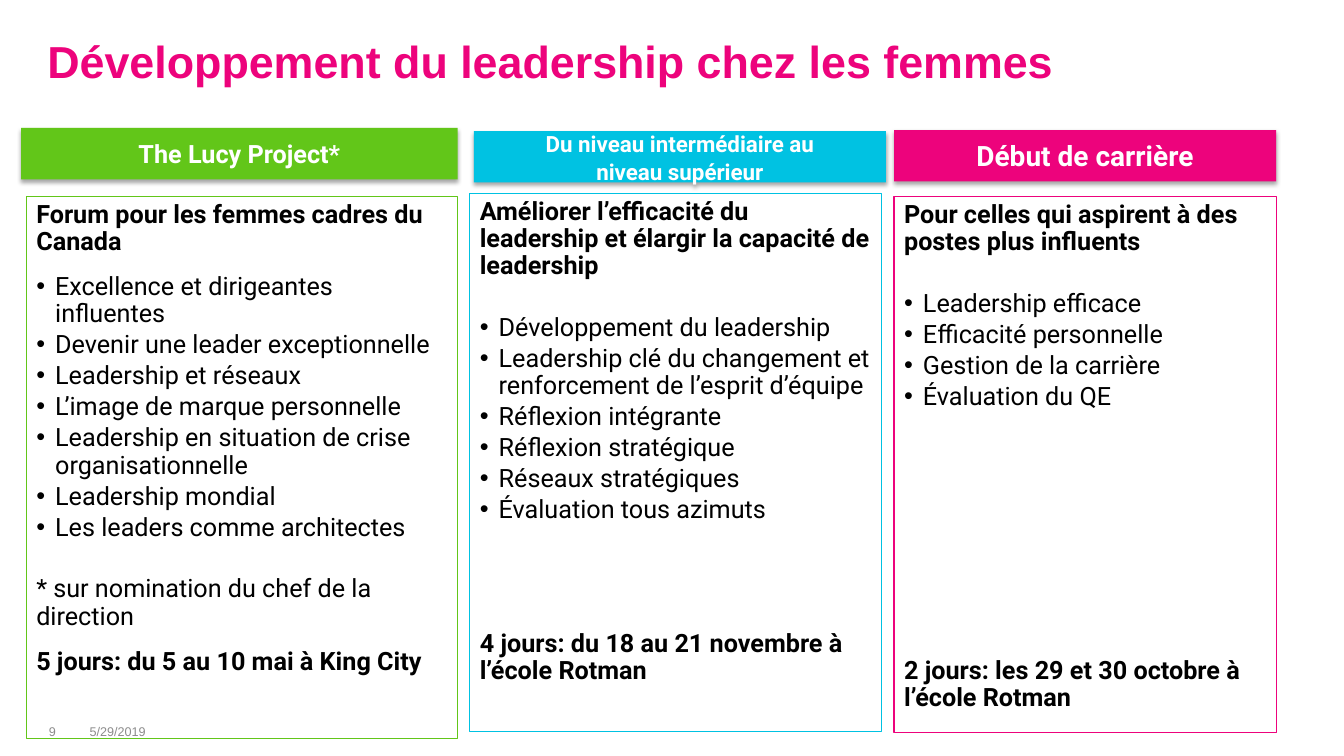
from lxml.etree import SubElement
from pptx import Presentation
from pptx.dml.color import RGBColor
from pptx.enum.shapes import MSO_SHAPE
from pptx.enum.text import MSO_ANCHOR, MSO_AUTO_SIZE, PP_ALIGN
from pptx.oxml import parse_xml
from pptx.oxml.ns import nsdecls, qn
from pptx.util import Pt

COLORS = {
    "pink": "ED037C",
    "cyan": "00C2E2",
    "green": "62C619",
    "black": "000000",
    "white": "FFFFFF",
    "gray": "8C8C8C",
}
LIST_SPACING = {"line_spacing": 0.9, "space_before": Pt(0), "space_after": Pt(2.7)}
BULLET_INDENT = Pt(13.5)

COLUMNS = [
    {
        "color": "green",
        "header": ["The Lucy Project*"],
        "header_box": (15.1, 91.4, 311.8, 36.7),
        "header_size": 18,
        "list_box": (18.7, 140.4, 308.2, 387.4),
        "heading": "Forum pour les femmes cadres du Canada",
        "bullet_gap": 10,
        "bullets": [
            "Excellence et dirigeantes influentes",
            "Devenir une leader exceptionnelle",
            "Leadership et réseaux",
            "L’image de marque personnelle",
            "Leadership en situation de crise organisationnelle",
            "Leadership mondial",
            "Les leaders comme architectes",
        ],
        "closing": [
            ("* sur nomination du chef de la direction", False, 22),
            ("5 jours: du 5 au 10 mai à King City", True, 10),
        ],
    },
    {
        "color": "cyan",
        "header": ["Du niveau intermédiaire au", "niveau supérieur"],
        "header_box": (338.4, 93.6, 294.5, 36.7),
        "header_size": 16,
        "list_box": (335.5, 138.2, 294.5, 384.5),
        "heading": "Améliorer l’efficacité du leadership et élargir la capacité de leadership",
        "bullet_gap": 22,
        "bullets": [
            "Développement du leadership",
            "Leadership clé du changement et renforcement de l’esprit d’équipe",
            "Réflexion intégrante",
            "Réflexion stratégique",
            "Réseaux stratégiques",
            "Évaluation tous azimuts",
        ],
        "closing": [("4 jours: du 18 au 21 novembre à l’école Rotman", True, 73.5)],
    },
    {
        "color": "pink",
        "header": ["Début de carrière"],
        "header_box": (638.6, 92.9, 272.9, 36.7),
        "header_size": 20,
        "list_box": (638.6, 140.4, 272.9, 383),
        "heading": "Pour celles qui aspirent à des postes plus influents",
        "bullet_gap": 22,
        "bullets": [
            "Leadership efficace",
            "Efficacité personnelle",
            "Gestion de la carrière",
            "Évaluation du QE",
        ],
        "closing": [("2 jours: les 29 et 30 octobre à l’école Rotman", True, 173.5)],
    },
]


def apply_formats(target, formats):
    for name, value in formats.items():
        setattr(target, name, value)


def write_paragraph(text_frame, index, text, paragraph_formats, font_formats, color, bullet=False):
    paragraph = text_frame.add_paragraph() if index else text_frame.paragraphs[0]
    properties = paragraph._p.get_or_add_pPr()
    indent = BULLET_INDENT if bullet else 0
    properties.set("marL", str(indent))
    properties.set("indent", str(-indent))
    if bullet:
        SubElement(properties, qn("a:buFont")).set("typeface", "Arial")
        SubElement(properties, qn("a:buChar")).set("char", "•")
    else:
        SubElement(properties, qn("a:buNone"))
    apply_formats(paragraph, paragraph_formats)
    run = paragraph.add_run()
    run.text = text
    apply_formats(run.font, font_formats)
    run.font.color.rgb = RGBColor.from_string(COLORS[color])


presentation = Presentation()
presentation.slide_width = Pt(960)
presentation.slide_height = Pt(540)
slide = presentation.slides.add_slide(presentation.slide_layouts[4])
title, *list_shapes = slide.placeholders
unused_placeholder = list_shapes.pop()
unused_placeholder.element.getparent().remove(unused_placeholder.element)

left, top, width, height = map(Pt, (26.6, 21.6, 756, 44.6))
apply_formats(title, {"left": left, "top": top, "width": width, "height": height})
apply_formats(title.text_frame, {
    "word_wrap": True, "auto_size": MSO_AUTO_SIZE.NONE, "vertical_anchor": MSO_ANCHOR.BOTTOM,
})
write_paragraph(
    title.text_frame, 0, "Développement du leadership chez les femmes",
    {"alignment": PP_ALIGN.LEFT}, {"name": "Arial", "size": Pt(32), "bold": True}, "pink",
)

footers = [
    ("5/29/2019", (56.9, 514.1, 72, 17.3), PP_ALIGN.LEFT),
    ("9", (18.7, 514.1, 37.4, 17.3), PP_ALIGN.CENTER),
]
for text, box, alignment in footers:
    footer = slide.shapes.add_textbox(*map(Pt, box))
    apply_formats(footer.text_frame, {"word_wrap": True, "vertical_anchor": MSO_ANCHOR.MIDDLE})
    write_paragraph(
        footer.text_frame, 0, text, {"alignment": alignment},
        {"name": "Arial", "size": Pt(9)}, "gray",
    )

for column, list_shape in zip(COLUMNS, list_shapes):
    column_color = RGBColor.from_string(COLORS[column["color"]])

    header = slide.shapes.add_shape(MSO_SHAPE.RECTANGLE, *map(Pt, column["header_box"]))
    header.fill.solid()
    header.fill.fore_color.rgb = column_color
    header.line.fill.background()
    header.shadow.inherit = False
    header._element.spPr.find(qn("a:effectLst")).append(parse_xml(
        f'<a:outerShdw {nsdecls("a")} blurRad="{Pt(3.1)}" dist="{Pt(1.8)}" dir="5400000" '
        f'rotWithShape="0"><a:srgbClr val="{COLORS["black"]}"><a:alpha val="35000"/>'
        '</a:srgbClr></a:outerShdw>'
    ))
    header.text_frame.vertical_anchor = MSO_ANCHOR.MIDDLE
    header_formats = {"alignment": PP_ALIGN.CENTER}
    if len(column["header"]) > 1:
        header_formats["line_spacing"] = Pt(20)
    for index, text in enumerate(column["header"]):
        write_paragraph(
            header.text_frame, index, text, header_formats,
            {"name": "Roboto", "size": Pt(column["header_size"]), "bold": True}, "white",
        )

    left, top, width, height = map(Pt, column["list_box"])
    apply_formats(list_shape, {"left": left, "top": top, "width": width, "height": height})
    list_shape.line.color.rgb = column_color
    list_shape.line.width = Pt(0.75)
    apply_formats(list_shape.text_frame, {
        "word_wrap": True, "auto_size": MSO_AUTO_SIZE.NONE, "vertical_anchor": MSO_ANCHOR.TOP,
    })
    rows = [(column["heading"], True, 0, False)]
    for index, text in enumerate(column["bullets"]):
        rows.append((text, False, 0 if index else column["bullet_gap"], True))
    rows += [(text, bold, gap, False) for text, bold, gap in column["closing"]]
    for index, (text, bold, gap, bullet) in enumerate(rows):
        write_paragraph(
            list_shape.text_frame, index, text,
            {**LIST_SPACING, "space_before": Pt(gap), "alignment": PP_ALIGN.LEFT},
            {"name": "Roboto", "size": Pt(18), "bold": bold}, "black", bullet,
        )

presentation.save("out.pptx")
